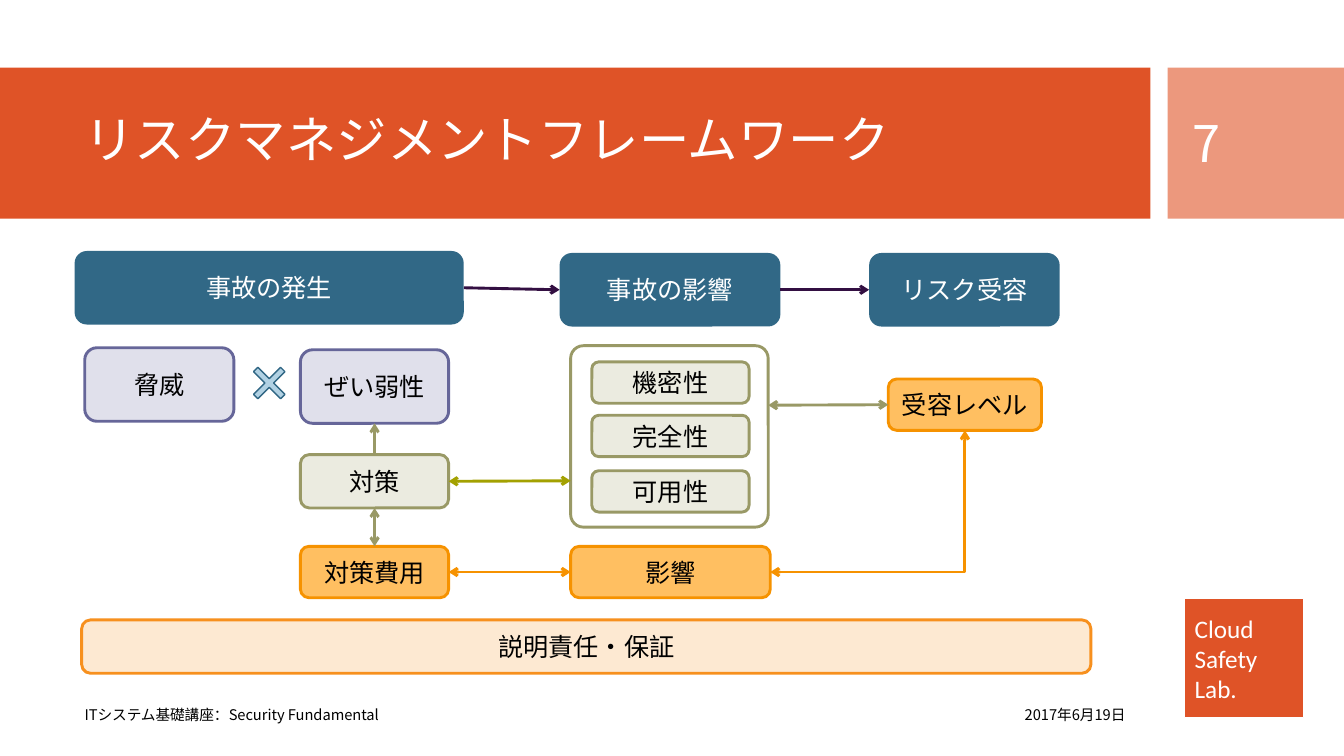
"""Builds the risk management framework slide."""
import pptx
import pptx.dml.color
import pptx.enum.shapes
import pptx.enum.text
import pptx.oxml.ns
import pptx.util
from lxml import etree

Inches = pptx.util.Inches
Shape = pptx.enum.shapes.MSO_SHAPE
Connector = pptx.enum.shapes.MSO_CONNECTOR
Align = pptx.enum.text.PP_ALIGN
qn = pptx.oxml.ns.qn

LATIN, JAPANESE = "Calibri", "Noto Sans CJK JP"
WHITE, BLACK, RED = "FFFFFF", "000000", "DF5327"
LINE_WIDTH = 2.08
TOP, LEFT, BOTTOM, RIGHT = range(4)

BANDS = [
    ((11.75, 5.94, 1.18, 1.18), RED, WHITE, "Cloud\nSafety\nLab."),
    ((0, 0.67, 11.41, 1.5), RED, None, ""),
    ((11.58, 0.67, 1.75, 1.5), "EC987D", None, ""),
]
TEXTS = [
    ("リスクマネジメントフレームワーク", (0.74, 0.82, 10.51, 1.18), 36, WHITE, Align.LEFT, 0.9),
    ("7", (11.73, 0.82, 1.26, 1.19), 36, WHITE, Align.LEFT, None),
    ("2017年6月19日", (8.26, 6.89, 3, 0.4), 10.5, BLACK, Align.RIGHT, None),
    ("ITシステム基礎講座：Security Fundamental", (0.74, 6.89, 7.51, 0.4), 10.5, BLACK, Align.LEFT, None),
]
STYLES = {
    "stage": ("316886", None, WHITE),
    "cause": ("E0E0EB", "666699", BLACK),
    "control": ("EBEBE0", "999966", BLACK),
    "cost": ("FFBF61", "F69200", BLACK),
    "assurance": ("FDE9D2", "F7901E", BLACK),
}
FRAME = (5.66, 3.43, 1.96, 1.8)
BOXES = [
    ("事故の発生", (0.74, 2.49, 3.86, 0.73), "stage"),
    ("事故の影響", (5.55, 2.51, 2.19, 0.73), "stage"),
    ("リスク受容", (8.62, 2.51, 1.89, 0.73), "stage"),
    ("脅威", (0.84, 3.45, 1.48, 0.73), "cause"),
    ("ぜい弱性", (2.98, 3.47, 1.47, 0.73), "cause"),
    ("機密性", (5.87, 3.59, 1.56, 0.41), "control"),
    ("完全性", (5.87, 4.12, 1.56, 0.41), "control"),
    ("可用性", (5.87, 4.67, 1.56, 0.41), "control"),
    ("対策", (2.98, 4.51, 1.47, 0.53), "control"),
    ("受容レベル", (8.81, 3.76, 1.52, 0.51), "cost"),
    ("説明責任・保証", (0.81, 6.15, 10.01, 0.53), "assurance"),
    ("対策費用", (2.98, 5.42, 1.47, 0.51), "cost"),
    ("影響", (5.66, 5.42, 1.98, 0.51), "cost"),
]
ARROWS = [
    (("事故の発生", RIGHT), ("事故の影響", LEFT), "330F42", False),
    (("事故の影響", RIGHT), ("リスク受容", LEFT), "330F42", False),
    (("対策", TOP), ("ぜい弱性", BOTTOM), "999966", False),
    (("対策", BOTTOM), ("対策費用", TOP), "999966", True),
    ((7.62, 4.02), ("受容レベル", LEFT), "999966", True),
    (("対策", RIGHT), (5.66, 4.77), "A3A101", True),
    (("対策費用", RIGHT), ("影響", LEFT), "F69200", True),
    (("影響", RIGHT), ("受容レベル", BOTTOM), "F69200", True),
]


def color(code):
    return pptx.dml.color.RGBColor.from_string(code)


def write(shape, text, size, ink, font, align, spacing=None):
    frame = shape.text_frame
    frame.text = text
    frame.word_wrap = True
    frame.vertical_anchor = pptx.enum.text.MSO_ANCHOR.MIDDLE
    for para in frame.paragraphs:
        para.alignment = align
        para.line_spacing = spacing
        for span in para.runs:
            span.font.size = pptx.util.Pt(size)
            span.font.color.rgb = color(ink)
            span.font.name = font
            latin = span.font._element.find(qn("a:latin"))
            latin.addnext(latin.makeelement(qn("a:ea"), {"typeface": JAPANESE}))


def add_block(page, kind, place, fill, line, width=LINE_WIDTH):
    shape = page.shapes.add_shape(kind, *map(Inches, place))
    shape.shadow.inherit = False
    shape.fill.solid()
    shape.fill.fore_color.rgb = color(fill)
    if line:
        shape.line.color.rgb = color(line)
        shape.line.width = pptx.util.Pt(width)
    else:
        shape.line.fill.background()
    return shape


def add_arrow(page, boxes, start, end, ink, two_way):
    bent = isinstance(start[0], str) and isinstance(end[0], str) and start[1] == RIGHT and end[1] == BOTTOM
    kind = Connector.ELBOW if bent else Connector.STRAIGHT
    points = [(0, 0) if isinstance(spot[0], str) else spot for spot in (start, end)]
    arrow = page.shapes.add_connector(kind, *[Inches(value) for point in points for value in point])
    for spot, join in ((start, arrow.begin_connect), (end, arrow.end_connect)):
        if spot[0] in boxes:
            join(boxes[spot[0]], spot[1])
    arrow.line.color.rgb = color(ink)
    arrow.line.width = pptx.util.Pt(LINE_WIDTH)
    properties = arrow._element.spPr
    if bent:
        properties.find(qn("a:prstGeom")).set("prst", "bentConnector2")
    line = properties.find(qn("a:ln"))
    for tag in ("a:headEnd", "a:tailEnd") if two_way else ("a:tailEnd",):
        etree.SubElement(line, qn(tag), type="arrow")
    etree.SubElement(properties, qn("a:effectLst"))


def main():
    deck = pptx.Presentation()
    deck.slide_width, deck.slide_height = Inches(13.33), Inches(7.5)
    page = deck.slides.add_slide(deck.slide_layouts[6])

    for place, fill, line, text in BANDS:
        band = add_block(page, Shape.RECTANGLE, place, fill, line, 1)
        if text:
            write(band, text, 18, WHITE, LATIN, Align.LEFT)
    for text, place, size, ink, align, spacing in TEXTS:
        label = page.shapes.add_textbox(*map(Inches, place))
        write(label, text, size, ink, JAPANESE, align, spacing)

    frame = add_block(page, Shape.ROUNDED_RECTANGLE, FRAME, WHITE, "999966")
    frame.adjustments[0] = 0.07
    boxes = {}
    for text, place, style in BOXES:
        fill, line, ink = STYLES[style]
        boxes[text] = add_block(page, Shape.ROUNDED_RECTANGLE, place, fill, line)
        write(boxes[text], text, 18, ink, LATIN, Align.CENTER)
    for arrow in ARROWS:
        add_arrow(page, boxes, *arrow)

    times = add_block(page, Shape.CROSS, (2.48, 3.61, 0.38, 0.38), "B1D1E3", "306684", 1)
    times.adjustments[0] = 0.42
    times.rotation = 45
    deck.save("out.pptx")


if __name__ == "__main__":
    main()
